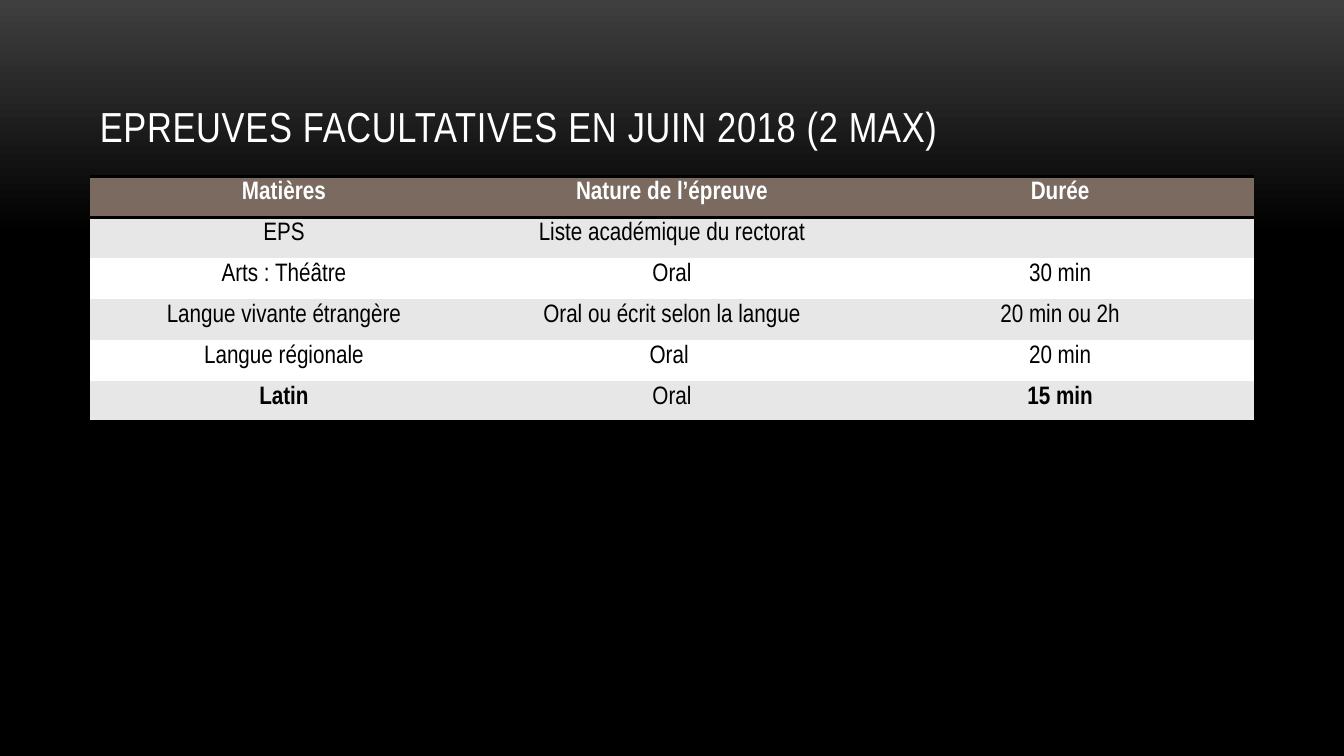
import copy

import pptx
import pptx.dml.color
import pptx.enum.text
import pptx.oxml
import pptx.oxml.ns
import pptx.util

Pt = pptx.util.Pt
FONT = "Arial Narrow"
NO_STYLE = "{2D5ABB26-0587-4C30-8999-92F81FD0307C}"


def color(hex_value):
    return pptx.dml.color.RGBColor.from_string(hex_value)


def add_border(cell, side):
    cell._tc.get_or_add_tcPr().append(pptx.oxml.parse_xml(
        f'<a:{side} {pptx.oxml.ns.nsdecls("a")} w="{Pt(2)}"><a:solidFill>'
        f'<a:srgbClr val="000000"/></a:solidFill></a:{side}>'))


prs = pptx.Presentation()
prs.slide_width, prs.slide_height = Pt(960), Pt(540)
s = prs.slides.add_slide(prs.slide_layouts[6])

fill = s.background.fill
fill.gradient()
fill.gradient_angle = 270
start, end = fill.gradient_stops
start.color.rgb, start.position = color("3F3F3F"), 0
end.color.rgb, end.position = color("000000"), 0.31
gs = s.background._cSld.xpath(".//a:gs")[1]
last = copy.deepcopy(gs)
last.set("pos", "100000")
gs.addnext(last)

sp = s.shapes.add_textbox(Pt(64.2), Pt(21.6), Pt(832), Pt(90))
tf = sp.text_frame
tf.word_wrap = True
tf.vertical_anchor = pptx.enum.text.MSO_ANCHOR.BOTTOM
tf.text = "EPREUVES FACULTATIVES EN JUIN 2018 (2 MAX)"
r = tf.paragraphs[0].runs[0]
r.font.name, r.font.size = FONT, Pt(30)
r.font.color.rgb = color("FFFFFF")
r.font._element.set("spc", "50")

rows = [
    ("Matières", "Nature de l’épreuve", "Durée"),
    ("EPS", "Liste académique du rectorat", ""),
    ("Arts : Théâtre", "Oral", "30 min"),
    ("Langue vivante étrangère", "Oral ou écrit selon la langue", "20 min ou 2h"),
    ("Langue régionale", "Oral ", "20 min"),
    ("Latin", "Oral", "15 min"),
]
bold_texts = {*rows[0], "Latin", "15 min"}

frame = s.shapes.add_table(len(rows), 3, Pt(64.2), Pt(126), Pt(831.6), Pt(175.2))
frame._element.xpath(".//a:tableStyleId")[0].text = NO_STYLE
table = frame.table
table.first_row = True
table.horz_banding = False
for column in table.columns:
    column.width = Pt(277.2)

for i, texts in enumerate(rows):
    table.rows[i].height = Pt(29.2)
    for j, text in enumerate(texts):
        cell = table.cell(i, j)
        if i == 0:
            add_border(cell, "lnT")
        if i in (0, len(rows) - 1):
            add_border(cell, "lnB")
        cell.fill.solid()
        cell.fill.fore_color.rgb = color("7A6A60" if i == 0 else "E7E7E7" if i % 2 else "FFFFFF")
        p = cell.text_frame.paragraphs[0]
        p.text = text
        p.alignment = pptx.enum.text.PP_ALIGN.CENTER
        p.font.size = Pt(18)
        for r in p.runs:
            r.font.name, r.font.size = FONT, Pt(18)
            r.font.bold = text in bold_texts
            r.font.color.rgb = color("000000" if i else "FFFFFF")

prs.save("out.pptx")
